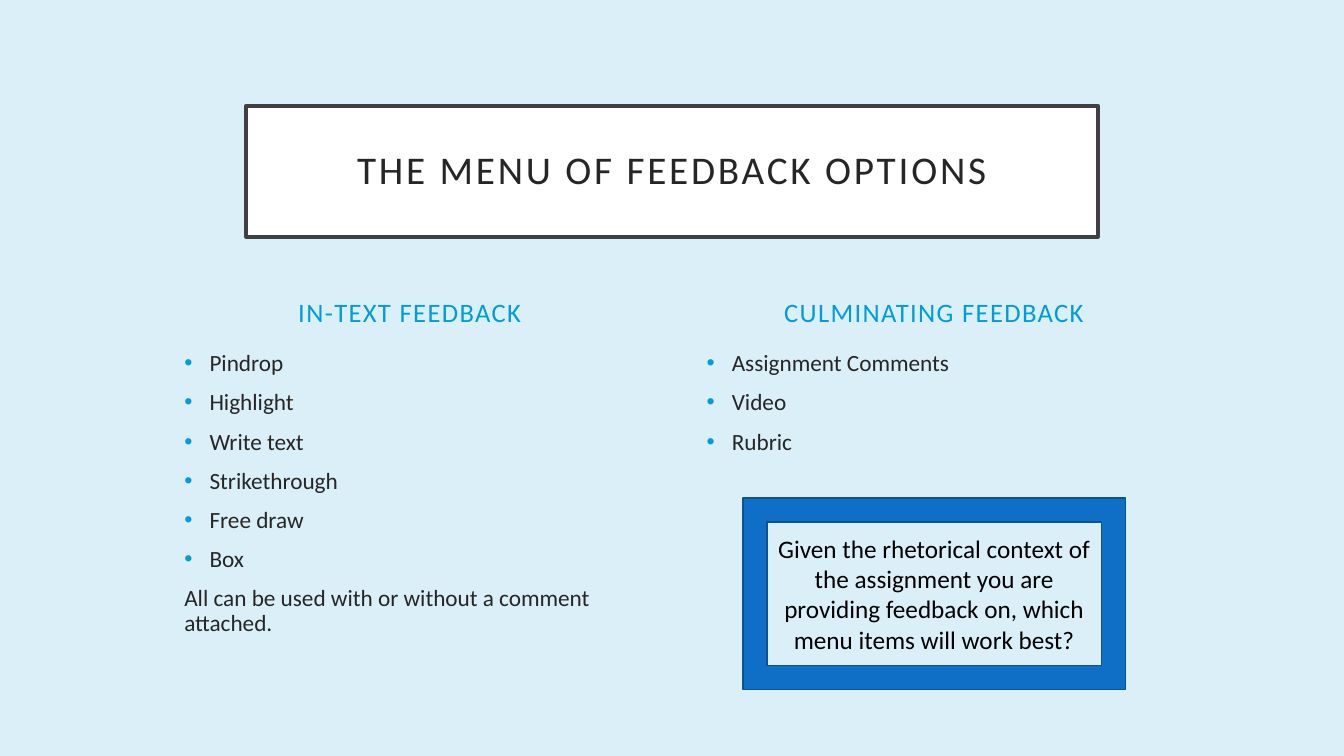
import pptx
import pptx.dml.color
import pptx.enum.shapes
import pptx.enum.text
import pptx.oxml.ns
import pptx.util
from lxml import etree

Inches = pptx.util.Inches
Pt = pptx.util.Pt
ALIGN = pptx.enum.text.PP_ALIGN
ANCHOR = pptx.enum.text.MSO_ANCHOR
SHAPE = pptx.enum.shapes.MSO_SHAPE


def rgb(value):
    return pptx.dml.color.RGBColor.from_string(value)


def set_all(target, values):
    for name, value in values.items():
        setattr(target, name, value)


class Deck:
    font = "Calibri"
    accent = "009DD9"
    ink = "262626"
    background = "DBEFF9"

    def __init__(self):
        self.prs = pptx.Presentation()
        set_all(self.prs, {"slide_width": Inches(13.33), "slide_height": Inches(7.5)})
        self.s = self.prs.slides.add_slide(self.prs.slide_layouts[6])
        fill = self.s.background.fill
        fill.solid()
        fill.fore_color.rgb = rgb(self.background)

    def add_text(self, p, text, size, color, spacing=0, **form):
        set_all(p, form)
        r = p.add_run()
        r.text = text
        set_all(r.font, {"name": self.font, "size": Pt(size)})
        r.font.color.rgb = rgb(color)
        if spacing:
            r._r.get_or_add_rPr().set("spc", str(spacing * 100))

    def bullet(self, p):
        pPr = p._p.get_or_add_pPr()
        pPr.set("marL", str(Inches(0.25)))
        pPr.set("indent", str(-Inches(0.25)))
        qn = pptx.oxml.ns.qn
        color = etree.SubElement(pPr, qn("a:buClr"))
        etree.SubElement(color, qn("a:srgbClr"), val=self.accent)
        etree.SubElement(pPr, qn("a:buFont"), typeface="Arial")
        etree.SubElement(pPr, qn("a:buChar"), char="•")

    def text_box(self, box, anchor):
        tf = self.s.shapes.add_textbox(*map(Inches, box)).text_frame
        set_all(tf, {"word_wrap": True, "vertical_anchor": anchor})
        return tf

    def heading(self, box, text):
        tf = self.text_box(box, ANCHOR.BOTTOM)
        self.add_text(tf.paragraphs[0], text, 19, self.accent, 1,
                      alignment=ALIGN.CENTER, space_before=Pt(10))

    def items(self, box, bullets, closing=None):
        tf = self.text_box(box, ANCHOR.TOP)
        lines = bullets + ([closing] if closing else [])
        for i, text in enumerate(lines):
            p = tf.add_paragraph() if i else tf.paragraphs[0]
            self.add_text(p, text, 16.6, self.ink, line_spacing=0.9, space_before=Pt(10))
            if i < len(bullets):
                self.bullet(p)

    def panel(self, kind, box, fill, line, width, text, size, color,
              spacing=0, inset=None, **form):
        sp = self.s.shapes.add_shape(kind, *map(Inches, box))
        sp.shadow.inherit = False
        sp.fill.solid()
        sp.fill.fore_color.rgb = rgb(fill)
        sp.line.color.rgb = rgb(line)
        sp.line.width = Pt(width)
        tf = sp.text_frame
        set_all(tf, {"word_wrap": True, "vertical_anchor": ANCHOR.MIDDLE})
        if inset:
            sides = ("left", "top", "right", "bottom")
            set_all(tf, {f"margin_{side}": Inches(inset) for side in sides})
        self.add_text(tf.paragraphs[0], text, size, color, spacing,
                      alignment=ALIGN.CENTER, **form)


def main():
    deck = Deck()
    deck.panel(SHAPE.RECTANGLE, (2.44, 1.05, 8.45, 1.3), "FFFFFF", "404040", 2.5,
               "THE MENU OF FEEDBACK OPTIONS", 28, deck.ink,
               spacing=2, inset=0.2, line_spacing=0.9)
    deck.heading((1.73, 2.53, 4.67, 0.77), "IN-TEXT FEEDBACK")
    deck.items((1.73, 3.44, 4.67, 3.01),
               ["Pindrop", "Highlight", "Write text", "Strikethrough", "Free draw", "Box"],
               "All can be used with or without a comment attached.")
    deck.heading((6.93, 2.53, 4.67, 0.77), "CULMINATING FEEDBACK")
    deck.items((6.91, 3.44, 4.65, 2.84), ["Assignment Comments", "Video", "Rubric"])
    deck.panel(SHAPE.FRAME, (7.37, 4.94, 3.79, 1.9), "0F6FC6", "0B5292", 1,
               "Given the rhetorical context of the assignment you are providing "
               "feedback on, which menu items will work best?", 18, "000000")
    deck.prs.save("out.pptx")


if __name__ == "__main__":
    main()
